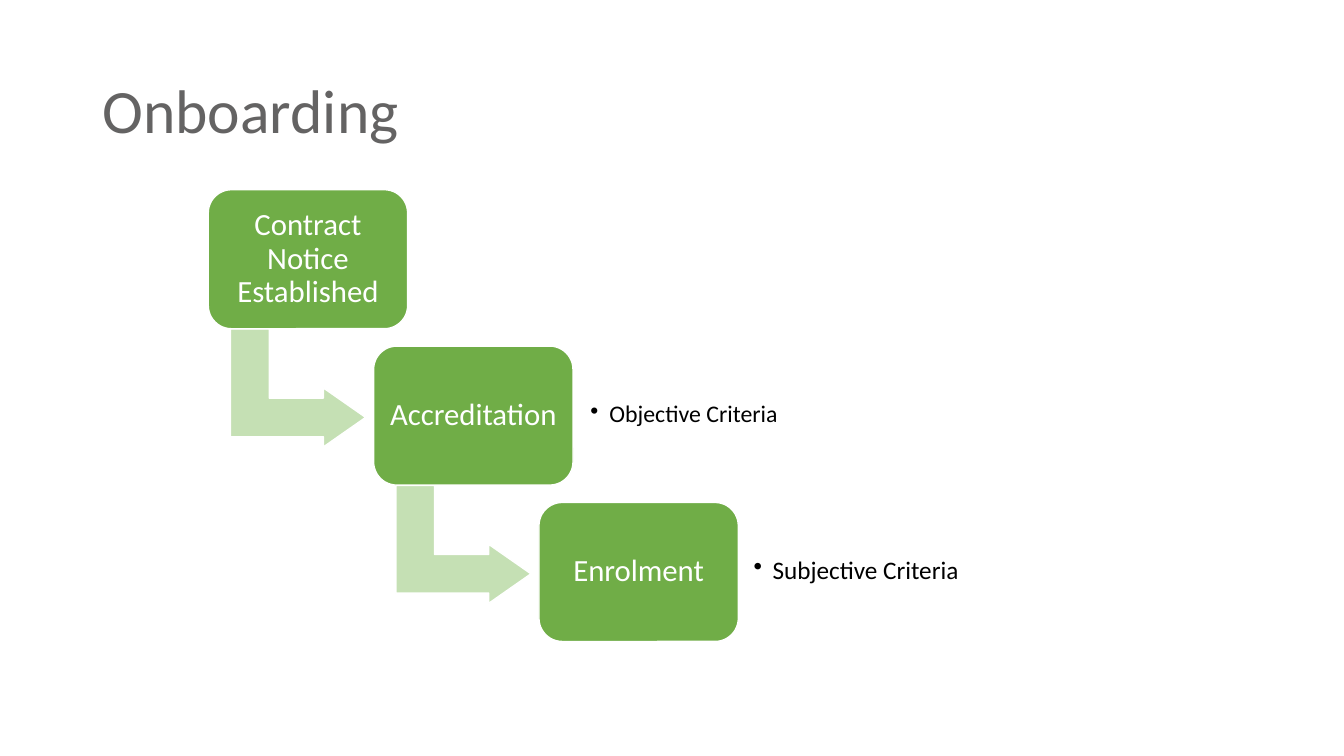
from lxml.etree import SubElement
from pptx import Presentation
from pptx.dml.color import RGBColor
from pptx.enum.shapes import MSO_SHAPE as SHAPE
from pptx.enum.text import MSO_ANCHOR as ANCHOR, MSO_AUTO_SIZE as AUTO_SIZE, PP_ALIGN as ALIGN
from pptx.oxml.ns import qn
from pptx.util import Pt

COLORS = {"title": "646363", "step": "70AD47", "arrow": "C5E0B4",
          "white": "FFFFFF", "black": "000000"}

deck = Presentation()
deck.slide_width, deck.slide_height = Pt(960), Pt(540)
page = deck.slides.add_slide(deck.slide_layouts[5])


def write(box, text, size, color, align, inset):
    frame = box.text_frame
    frame.word_wrap = True
    frame.auto_size = AUTO_SIZE.NONE
    frame.vertical_anchor = ANCHOR.MIDDLE
    frame.margin_left = frame.margin_right = Pt(inset)
    frame.margin_top = frame.margin_bottom = Pt(inset)
    para = frame.paragraphs[0]
    para.alignment = align
    para.line_spacing = 0.9
    span = para.add_run()
    span.text = text
    span.font.name = "Calibri"
    span.font.size = Pt(size)
    span.font.color.rgb = RGBColor.from_string(COLORS[color])
    return para


def add_block(kind, left, top, width, height, color):
    block = page.shapes.add_shape(kind, Pt(left), Pt(top), Pt(width), Pt(height))
    block.shadow.inherit = False
    block.fill.solid()
    block.fill.fore_color.rgb = RGBColor.from_string(COLORS[color])
    block.line.color.rgb = RGBColor.from_string(COLORS["white"])
    block.line.width = Pt(1)
    return block


# Title
title = page.shapes.title
title.left, title.top, title.width, title.height = Pt(66), Pt(28.8), Pt(828), Pt(104.4)
write(title, "Onboarding", 44, "title", ALIGN.LEFT, 7.2)

# Descending steps: label, criterion, criterion size, criterion inset
steps = [
    ("Contract Notice Established", None, None, None),
    ("Accreditation", "Objective Criteria", 17, 6.5),
    ("Enrolment", "Subjective Criteria", 18, 5),
]
STEP_WIDTH, STEP_HEIGHT = 142.4, 99.3

for index, (label, criterion, size, inset) in enumerate(steps):
    left = 148.8 + 118.1 * index
    top = 135.5 + 111.7 * index

    # Arrow to the next step
    if index < len(steps) - 1:
        arrow = add_block(SHAPE.BENT_UP_ARROW, left + 22, top + 93.4, 84.2, 96.5, "arrow")
        arrow.rotation = 90
        for position, value in enumerate((0.328, 0.25, 0.358)):
            arrow.adjustments[position] = value

    # Step box
    step = add_block(SHAPE.ROUNDED_RECTANGLE, left, top, STEP_WIDTH, STEP_HEIGHT, "step")
    step.adjustments[0] = 0.167
    write(step, label, 22, "white", ALIGN.CENTER, 6)

    # Bulleted criterion beside the step
    if criterion:
        note = page.shapes.add_textbox(Pt(left + STEP_WIDTH + 6), Pt(top + 8.8),
                                       Pt(210), Pt(80.6))
        para = write(note, criterion, size, "black", ALIGN.LEFT, inset)
        settings = para._p.get_or_add_pPr()
        settings.set("marL", str(Pt(13.5)))
        settings.set("indent", str(-Pt(13.5)))
        SubElement(settings, qn("a:buChar")).set("char", "•")

deck.save("out.pptx")
